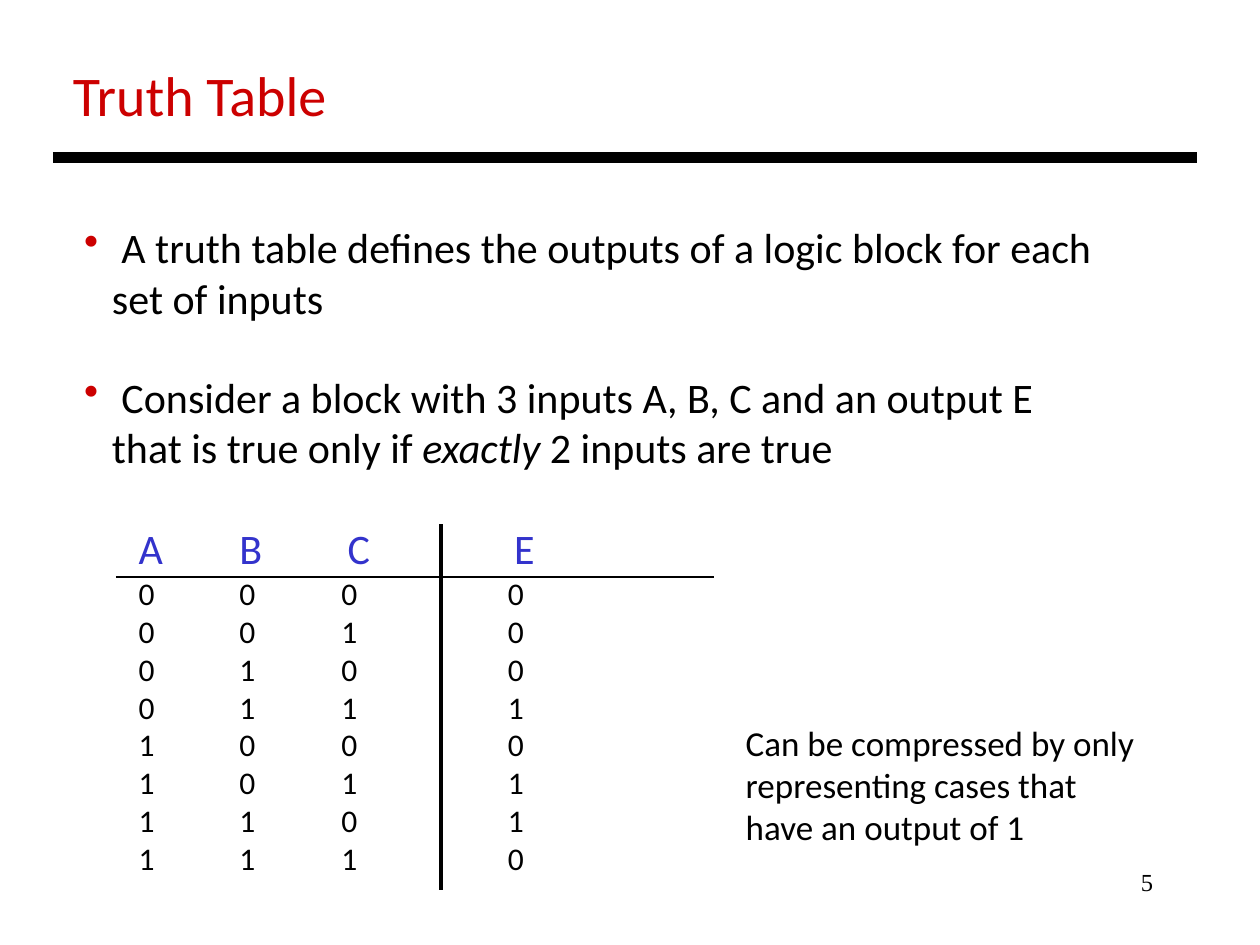
from dataclasses import dataclass
from itertools import product

from lxml import etree
from pptx import Presentation
from pptx.dml.color import RGBColor
from pptx.enum.shapes import MSO_CONNECTOR
from pptx.enum.text import PP_ALIGN
from pptx.oxml.ns import qn
from pptx.util import Inches, Pt

STRAIGHT = MSO_CONNECTOR.STRAIGHT
LEFT, RIGHT = PP_ALIGN.LEFT, PP_ALIGN.RIGHT


@dataclass(frozen=True)
class Theme:
    ink: str = "000000"
    red: str = "CC0000"
    blue: str = "3333CC"
    font: str = "Calibri"
    serif: str = "Times New Roman"
    title: int = 32
    body: int = 24
    note: int = 20
    cell: int = 18
    page: int = 14


THEME = Theme()


def write(para, text, size=THEME.body, color=THEME.ink, font=THEME.font,
          italic=False, align=LEFT):
    para.alignment = align
    run = para.add_run()
    run.text = text
    run.font.size = Pt(size)
    run.font.name = font
    run.font.italic = italic
    run.font.color.rgb = RGBColor.from_string(color)


def add_box(slide, x, y, w, h, wrap=True):
    box = slide.shapes.add_textbox(Inches(x), Inches(y), Inches(w), Inches(h))
    box.text_frame.word_wrap = wrap
    return box.text_frame


def add_line(slide, x1, y1, x2, y2, width):
    line = slide.shapes.add_connector(
        STRAIGHT, Inches(x1), Inches(y1), Inches(x2), Inches(y2))
    line.line.color.rgb = RGBColor.from_string(THEME.ink)
    line.line.width = Pt(width)
    etree.SubElement(line._element.spPr, qn("a:effectLst"))


def set_bullet(para, indent):
    props = para._p.get_or_add_pPr()
    props.set("marL", str(Inches(indent)))
    props.set("indent", str(-Inches(indent)))
    color = etree.SubElement(props, qn("a:buClr"))
    etree.SubElement(color, qn("a:srgbClr"), val=THEME.red)
    etree.SubElement(props, qn("a:buChar"), char="•")


def add_title(slide, x, y, w, h):
    frame = add_box(slide, x, y, w, h, wrap=False)
    write(frame.paragraphs[0], "Truth Table", size=THEME.title, color=THEME.red)


def add_points(slide, x, y, w, h):
    frame = add_box(slide, x, y, w, h)
    first, second = frame.paragraphs[0], frame.add_paragraph()
    second.space_before = Pt(28)
    for para in (first, second):
        set_bullet(para, 0.22)
    write(first, " A truth table defines the outputs of a logic block "
                 "for each set of inputs")
    write(second, " Consider a block with 3 inputs A, B, C and an output E "
                  "that is true only if ")
    write(second, "exactly", italic=True)
    write(second, " 2 inputs are true")


def add_truth(slide, x, y, w, h):
    """Table of all inputs, with E true when exactly two of them are."""
    top = 0.41
    bits = list(product((0, 1), repeat=3))
    rows = ["ABCE"] + [(*row, int(sum(row) == 2)) for row in bits]
    widths = [0.8, 0.8, 0.98]
    split = x + sum(widths)
    widths.append(w - sum(widths))
    pads = [0.18, 0.18, 0.19, 0.53]
    shifts = [0, 0, 0.05, 0.05]

    table = slide.shapes.add_table(
        len(rows), len(widths), Inches(x), Inches(y), Inches(w), Inches(h)).table
    table.first_row = table.horz_banding = False
    for column, width in zip(table.columns, widths):
        column.width = Inches(width)
    for r, row in enumerate(rows):
        head = r == 0
        table.rows[r].height = Inches(top if head else (h - top) / len(bits))
        for c, value in enumerate(row):
            cell = table.cell(r, c)
            cell.fill.background()
            cell.margin_left = Inches(pads[c] + (shifts[c] if head else 0))
            cell.margin_right = cell.margin_top = cell.margin_bottom = 0
            para = cell.text_frame.paragraphs[0]
            para.line_spacing = 0.98
            write(para, str(value), size=THEME.body if head else THEME.cell,
                  color=THEME.blue if head else THEME.ink)

    add_line(slide, x, y + top + 0.01, x + w, y + top + 0.01, 1)
    add_line(slide, split, y, split, y + h + 0.09, 2.25)


def add_note(slide, x, y, w, h):
    frame = add_box(slide, x, y, w, h)
    write(frame.paragraphs[0], "Can be compressed by only representing cases "
                               "that have an output of 1", size=THEME.note)


def add_page(slide, x, y, w, h):
    frame = add_box(slide, x, y, w, h)
    write(frame.paragraphs[0], "5", size=THEME.page, font=THEME.serif, align=RIGHT)


def main():
    deck = Presentation()
    deck.slide_width, deck.slide_height = Inches(10), Inches(7.5)
    slide = deck.slides.add_slide(deck.slide_layouts[6])
    add_title(slide, 0.48, 0.43, 2.24, 0.64)
    add_line(slide, 0.42, 1.25, 9.5, 1.25, 6)
    add_points(slide, 0.57, 1.71, 8.22, 2.2)
    add_truth(slide, 0.92, 4.16, 4.75, 2.81)
    add_note(slide, 5.82, 5.68, 3.31, 1.11)
    add_page(slide, 7.17, 6.83, 2.08, 0.5)
    deck.save("out.pptx")


if __name__ == "__main__":
    main()
